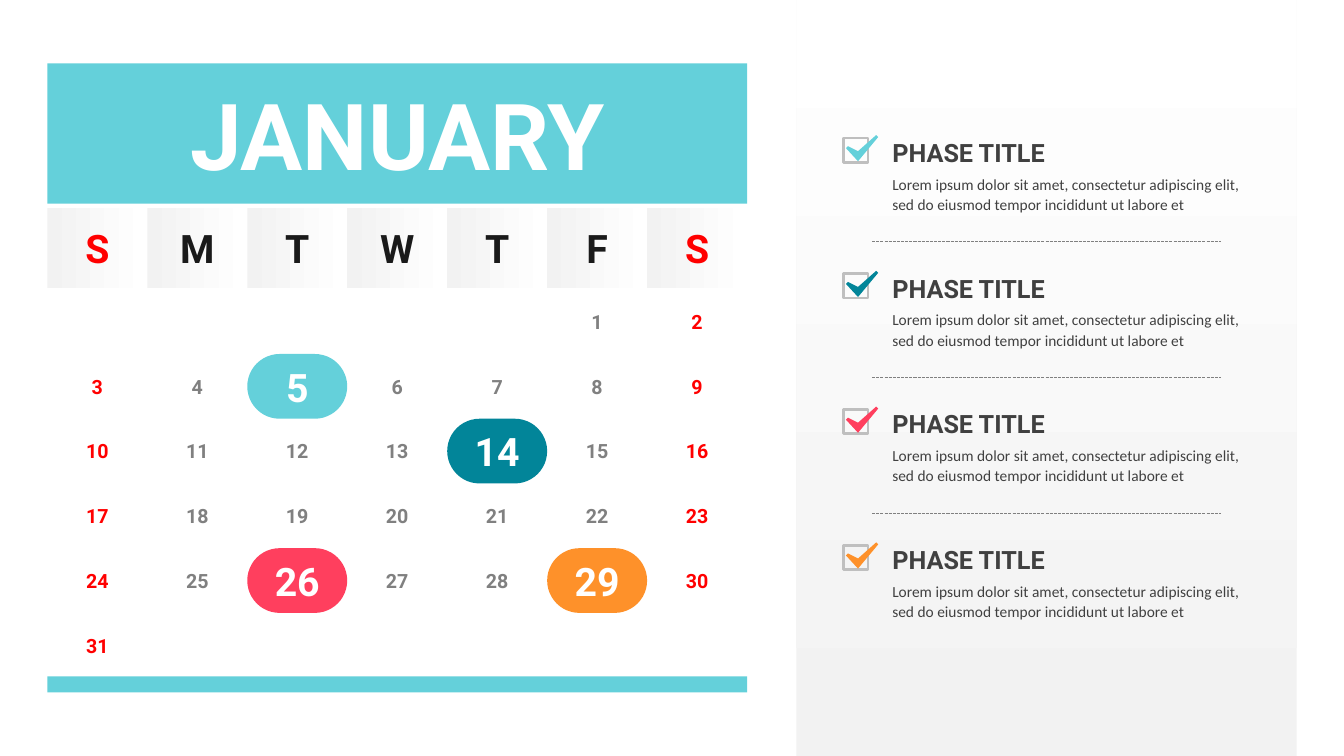
from pptx import Presentation
from pptx.dml.color import RGBColor
from pptx.enum.dml import MSO_LINE
from pptx.enum.shapes import MSO_CONNECTOR, MSO_SHAPE
from pptx.enum.text import MSO_ANCHOR, MSO_AUTO_SIZE, PP_ALIGN
from pptx.oxml.ns import qn
from pptx.util import Inches, Pt
from lxml.etree import SubElement

# Colours
AQUA = RGBColor(0x64, 0xD0, 0xDA)
TEAL = RGBColor(0x02, 0x85, 0x99)
ROSE = RGBColor(0xFF, 0x3F, 0x5E)
ORANGE = RGBColor(0xFE, 0x91, 0x2A)
RED = RGBColor(0xFF, 0x00, 0x00)
BLACK = RGBColor(0x1A, 0x1A, 0x1A)
DARK = RGBColor(0x40, 0x40, 0x40)
GREY = RGBColor(0x80, 0x80, 0x80)
SILVER = RGBColor(0xBF, 0xBF, 0xBF)
PALE = RGBColor(0xF2, 0xF2, 0xF2)
WHITE = RGBColor(0xFF, 0xFF, 0xFF)

# Content
MONTH = "JANUARY"
WEEK = "SMTWTFS"
FIRST, DAYS = 5, 31  # column of day 1, length of month
MARKS = {5: AQUA, 14: TEAL, 26: ROSE, 29: ORANGE}
BODY = ("Lorem ipsum dolor sit amet, consectetur adipiscing elit, "
        "sed do eiusmod tempor incididunt ut labore et")
PHASES = [("PHASE TITLE", BODY, color) for color in MARKS.values()]

# Layout, in inches
LEFT, WIDE = 0.47, 6.94
COL = WIDE / len(WEEK)
TOP, ROW = 2.87, 0.642
PHASE_TOP, STEP = 1.33, 1.347
TICK = [(0.3, 0), (0.32, 0.02), (0.12, 0.26), (0, 0.13),
        (0.02, 0.11), (0.12, 0.16)]


def box(parent, kind, x, y, w, h, fill=None):
    shape = parent.add_shape(kind, *map(Inches, (x, y, w, h)))
    shape.shadow.inherit = False
    shape.line.fill.background()
    if fill is None:
        shape.fill.background()
    else:
        shape.fill.solid()
        shape.fill.fore_color.rgb = fill
    return shape


def fade(shape, angle):
    shape.fill.gradient()
    shape.fill.gradient_angle = angle
    for stop, color in zip(shape.fill.gradient_stops, (PALE, WHITE)):
        stop.color.rgb = color


def frame(shape):
    text = shape.text_frame
    text.margin_left = text.margin_right = 0
    text.margin_top = text.margin_bottom = 0
    text.word_wrap = True
    return text


def style(para, words, size, color, bold=True, face="Roboto"):
    para.text = words
    font = para.font
    font.name, font.size, font.bold = face, Pt(size), bold
    font.color.rgb = color


def label(shape, words, size, color):
    text = frame(shape)
    text.vertical_anchor = MSO_ANCHOR.MIDDLE
    para = text.paragraphs[0]
    para.alignment = PP_ALIGN.CENTER
    style(para, words, size, color)


def day_color(col, plain):
    return RED if col in (0, 6) else plain


def draw_month(shapes):
    group = shapes.add_group_shape().shapes

    # Weekday row
    for col, name in enumerate(WEEK):
        head = box(group, MSO_SHAPE.RECTANGLE, LEFT + col * COL, 2.06, COL, 0.8)
        fade(head, 0)
        label(head, name, 28, day_color(col, BLACK))

    # Month banner and foot bar
    banner = box(group, MSO_SHAPE.RECTANGLE, LEFT, 0.63, WIDE, 1.39, AQUA)
    label(banner, MONTH, 66, WHITE)
    box(group, MSO_SHAPE.RECTANGLE, LEFT, 6.71, WIDE, 0.16, AQUA)

    # Day grid
    for day in range(1, DAYS + 1):
        row, col = divmod(FIRST + day - 1, len(WEEK))
        place = LEFT + col * COL, TOP + row * ROW, COL, ROW
        if day in MARKS:
            pill = box(group, MSO_SHAPE.ROUNDED_RECTANGLE, *place, MARKS[day])
            pill.adjustments[0] = 0.5
            label(pill, str(day), 28, WHITE)
        else:
            cell = group.add_textbox(*map(Inches, place))
            label(cell, str(day), 14, day_color(col, GREY))


def draw_phase(shapes, y, title, body, color):
    # Check box and tick
    group = shapes.add_group_shape().shapes
    square = box(group, MSO_SHAPE.RECTANGLE, 8.37, y + 0.04, 0.24, 0.24)
    square.line.color.rgb = SILVER
    square.line.width = Pt(2)
    points = [(Inches(8.39 + dx), Inches(y + 0.01 + dy)) for dx, dy in TICK]
    path = group.build_freeform(*points[0])
    path.add_line_segments(points[1:], close=True)
    tick = path.convert_to_shape()
    tick.shadow.inherit = False
    tick.fill.solid()
    tick.fill.fore_color.rgb = color
    tick.line.fill.background()

    # Title and body
    note = shapes.add_textbox(*map(Inches, (8.85, y, 3.54, 0.8)))
    text = frame(note)
    text.auto_size = MSO_AUTO_SIZE.SHAPE_TO_FIT_TEXT
    style(text.paragraphs[0], title, 18, DARK)
    style(text.add_paragraph(), body, 11, DARK, False, "Calibri")
    for para in text.paragraphs:
        para.line_spacing = 1.1
        para.space_before = Pt(4)


def draw_rule(shapes, y):
    rule = shapes.add_connector(MSO_CONNECTOR.STRAIGHT,
                                *map(Inches, (8.65, y, 12.11, y)))
    rule.line.color.rgb = GREY
    rule.line.width = Pt(0.75)
    rule.line.dash_style = MSO_LINE.SQUARE_DOT
    SubElement(rule._element.spPr, qn("a:effectLst"))


def main():
    deck = Presentation()
    deck.slide_width, deck.slide_height = Inches(13.33), Inches(7.5)
    shapes = deck.slides.add_slide(deck.slide_layouts[6]).shapes

    draw_month(shapes)

    # Phase panel
    panel = box(shapes, MSO_SHAPE.RECTANGLE, 7.9, 0, 4.96, 7.5)
    fade(panel, 90)
    for i, phase in enumerate(PHASES):
        draw_phase(shapes, PHASE_TOP + i * STEP, *phase)
    for i in range(len(PHASES) - 1):
        draw_rule(shapes, 2.4 + i * STEP)

    deck.save("out.pptx")


if __name__ == "__main__":
    main()
